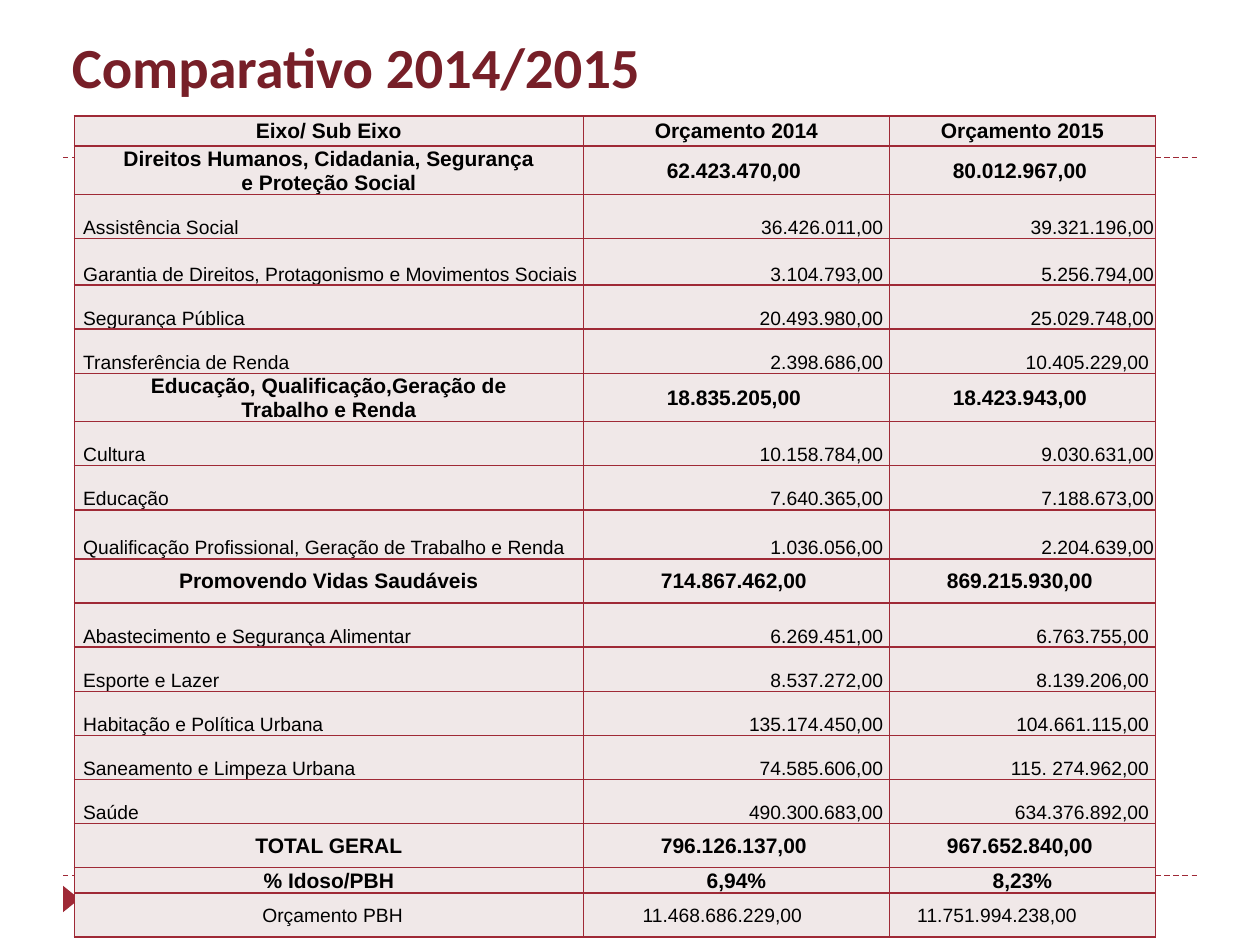
from lxml.etree import SubElement
from pptx import Presentation
from pptx.dml.color import RGBColor
from pptx.enum.dml import MSO_LINE
from pptx.enum.shapes import MSO_CONNECTOR, MSO_SHAPE
from pptx.enum.text import MSO_ANCHOR as ANCHOR, PP_ALIGN as ALIGN
from pptx.oxml import parse_xml
from pptx.oxml.ns import nsdecls, qn
from pptx.util import Inches, Pt

COLORS = {"accent": "9F2936", "title": "771F28", "cell": "F0E8E8", "text": "000000"}

COLUMN_WIDTHS = [4.04, 2.43, 2.11]
HEADER, AXIS, ITEM, PERCENT, BUDGET = "header", "axis", "item", "percent", "budget"
BUDGET_INDENTS = [0.07, 0.47, 0.22]
FLUSH, SPACED = 0.01, 0.05

ROWS = [
    (HEADER, 0.24, "Eixo/ Sub Eixo", "Orçamento 2014", "Orçamento 2015"),
    (AXIS, 0.38, "Direitos Humanos, Cidadania, Segurança\ne Proteção Social",
     "62.423.470,00", "80.012.967,00"),
    (ITEM, 0.35, "Assistência Social", "36.426.011,00", "39.321.196,00"),
    (ITEM, 0.37, "Garantia de Direitos, Protagonismo e Movimentos Sociais",
     "3.104.793,00", "5.256.794,00"),
    (ITEM, 0.35, "Segurança Pública", "20.493.980,00", "25.029.748,00"),
    (ITEM, 0.35, "Transferência de Renda", "2.398.686,00", "10.405.229,00"),
    (AXIS, 0.38, "Educação, Qualificação,Geração de\nTrabalho e Renda",
     "18.835.205,00", "18.423.943,00"),
    (ITEM, 0.35, "Cultura", "10.158.784,00", "9.030.631,00"),
    (ITEM, 0.35, "Educação", "7.640.365,00", "7.188.673,00"),
    (ITEM, 0.39, "Qualificação Profissional, Geração de Trabalho e Renda",
     "1.036.056,00", "2.204.639,00"),
    (AXIS, 0.35, "Promovendo Vidas Saudáveis", "714.867.462,00", "869.215.930,00"),
    (ITEM, 0.35, "Abastecimento e Segurança Alimentar", "6.269.451,00", "6.763.755,00"),
    (ITEM, 0.35, "Esporte e Lazer", "8.537.272,00", "8.139.206,00"),
    (ITEM, 0.35, "Habitação e Política Urbana", "135.174.450,00", "104.661.115,00"),
    (ITEM, 0.35, "Saneamento e Limpeza Urbana", "74.585.606,00", "115. 274.962,00"),
    (ITEM, 0.35, "Saúde", "490.300.683,00", "634.376.892,00"),
    (AXIS, 0.35, "TOTAL GERAL", "796.126.137,00", "967.652.840,00"),
    (PERCENT, 0.2, "% Idoso/PBH", "6,94%", "8,23%"),
    (BUDGET, 0.35, "Orçamento PBH", "11.468.686.229,00", "11.751.994.238,00"),
]
FLUSH_ITEMS = {"Assistência Social", "Segurança Pública", "Cultura", "Educação",
               "Garantia de Direitos, Protagonismo e Movimentos Sociais",
               "Qualificação Profissional, Geração de Trabalho e Renda"}


def rgb(name):
    """Return the named palette colour."""
    return RGBColor.from_string(COLORS[name])


def add_rules(slide, left, top, width, height):
    """Draw the dashed rules along the top and bottom of the box."""
    for y in (top, top + height):
        rule = slide.shapes.add_connector(
            MSO_CONNECTOR.STRAIGHT, Inches(left), Inches(y), Inches(left + width), Inches(y))
        rule.line.color.rgb = rgb("accent")
        rule.line.width = Pt(0.75)
        rule.line.dash_style = MSO_LINE.DASH
        SubElement(rule._element.spPr, qn("a:effectLst"))


def add_marker(slide, left, top, width, height):
    """Draw the footer triangle pointing right."""
    marker = slide.shapes.add_shape(
        MSO_SHAPE.ISOSCELES_TRIANGLE, Inches(left), Inches(top), Inches(width), Inches(height))
    marker.rotation = 90
    marker.shadow.inherit = False
    marker.fill.solid()
    marker.fill.fore_color.rgb = rgb("accent")
    marker.line.fill.background()


def add_title(slide, left, top, width, height):
    """Place and format the title placeholder in the box."""
    title = slide.shapes.title
    title.left, title.top = Inches(left), Inches(top)
    title.width, title.height = Inches(width), Inches(height)
    frame = title.text_frame
    frame.text = "Comparativo 2014/2015"
    frame.word_wrap = True
    frame.vertical_anchor = ANCHOR.BOTTOM
    frame.margin_left = Inches(0.29)
    paragraph = frame.paragraphs[0]
    paragraph.alignment = ALIGN.LEFT
    font = paragraph.runs[0].font
    font.name, font.size, font.bold = "Calibri", Pt(32.4), True
    font.color.rgb = rgb("title")


def add_borders(cell):
    """Give the cell a thin line on each side."""
    properties = cell._tc.get_or_add_tcPr()
    for index, side in enumerate(("lnL", "lnR", "lnT", "lnB")):
        properties.insert(index, parse_xml(
            f'<a:{side} {nsdecls("a")} w="{Pt(1)}"><a:solidFill>'
            f'<a:srgbClr val="{COLORS["accent"]}"/></a:solidFill></a:{side}>'))


def cell_layout(kind, column, label):
    """Return the alignment, anchor, left inset and right inset of a cell."""
    if kind == ITEM:
        if column == 0:
            return ALIGN.LEFT, ANCHOR.BOTTOM, 0.07, FLUSH
        flush = column == 2 and label in FLUSH_ITEMS
        return ALIGN.RIGHT, ANCHOR.BOTTOM, 0.01, FLUSH if flush else SPACED
    if kind == BUDGET:
        align = ALIGN.LEFT if column else ALIGN.CENTER
        return align, ANCHOR.MIDDLE, BUDGET_INDENTS[column], FLUSH
    anchor = ANCHOR.BOTTOM if kind == PERCENT else ANCHOR.MIDDLE
    spaced = kind == AXIS and column > 0
    return ALIGN.CENTER, anchor, 0.01, SPACED if spaced else FLUSH


def fill_cell(cell, text, kind, layout):
    """Write and format one cell."""
    align, anchor, inset_left, inset_right = layout
    cell.text_frame.text = text
    cell.vertical_anchor = anchor
    cell.margin_left, cell.margin_right = Inches(inset_left), Inches(inset_right)
    cell.margin_top, cell.margin_bottom = Inches(0.01), 0
    cell.fill.solid()
    cell.fill.fore_color.rgb = rgb("cell")
    add_borders(cell)
    regular = kind in (ITEM, BUDGET)
    for paragraph in cell.text_frame.paragraphs:
        paragraph.alignment = align
        font = paragraph.runs[0].font
        font.name, font.size, font.bold = "Arial", Pt(11 if regular else 12), not regular
        font.color.rgb = rgb("text")


def add_budget_table(slide, left, top, width, height):
    """Build the budget comparison table in the box."""
    budget = slide.shapes.add_table(
        len(ROWS), len(COLUMN_WIDTHS),
        Inches(left), Inches(top), Inches(width), Inches(height)).table
    budget.horz_banding = False
    for column, column_width in zip(budget.columns, COLUMN_WIDTHS):
        column.width = Inches(column_width)
    for r, (kind, row_height, *texts) in enumerate(ROWS):
        budget.rows[r].height = Inches(row_height)
        for c, text in enumerate(texts):
            fill_cell(budget.cell(r, c), text, kind, cell_layout(kind, c, texts[0]))


def main():
    """Build and save the slide."""
    deck = Presentation()
    deck.slide_width, deck.slide_height = Inches(10), Inches(7.5)
    slide = deck.slides.add_slide(deck.slide_layouts[5])
    add_rules(slide, 0.5, 1.25, 9, 5.7)
    add_marker(slide, 0.46, 7.07, 0.21, 0.13)
    add_title(slide, 0.28, 0.21, 9.72, 0.63)
    add_budget_table(slide, 0.59, 0.92, sum(COLUMN_WIDTHS), 6.55)
    deck.save("out.pptx")


if __name__ == "__main__":
    main()
